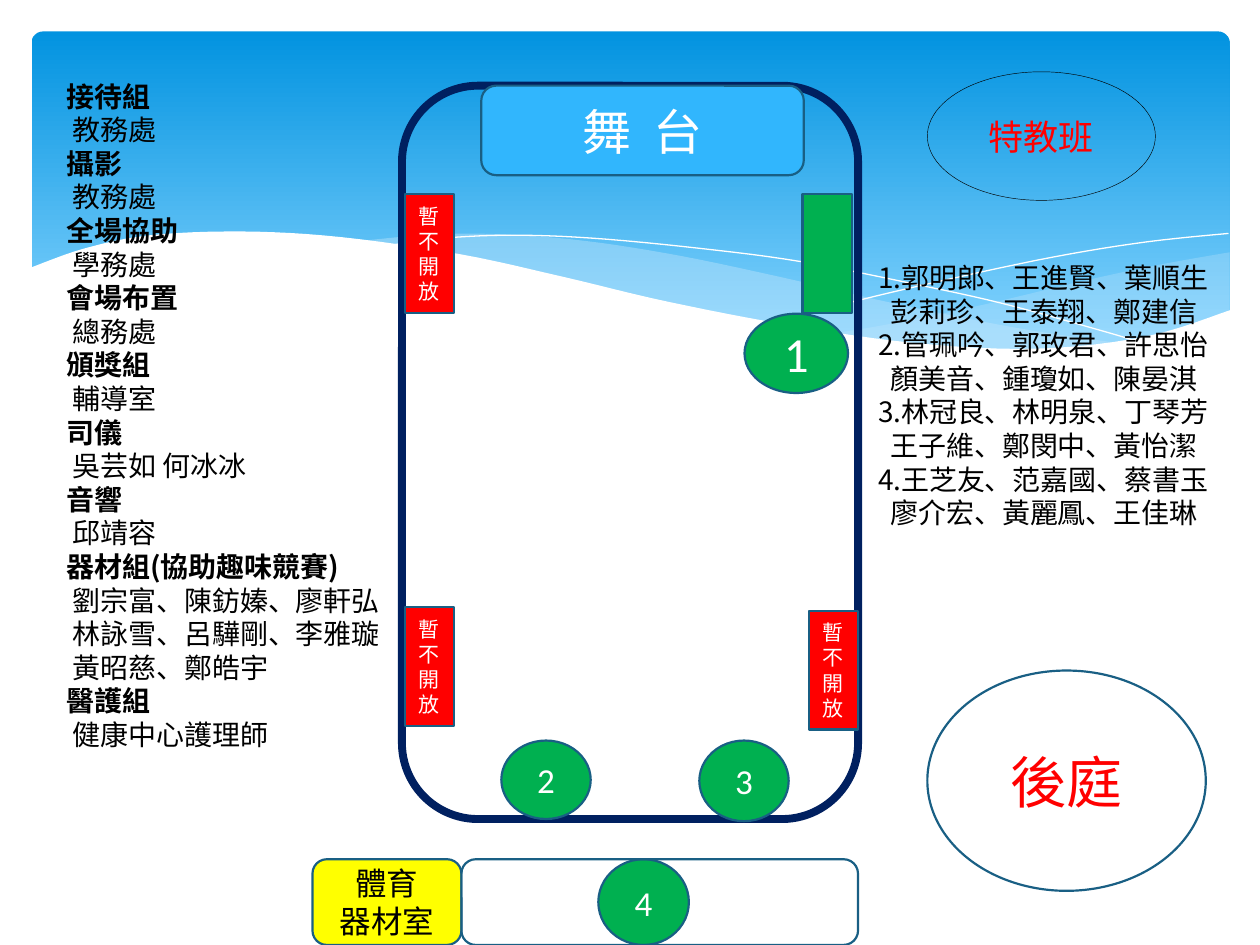
"""Build the staffing map of the assembly hall."""
from dataclasses import dataclass

from lxml import etree
from pptx import Presentation
from pptx.dml.color import RGBColor
from pptx.enum.shapes import MSO_SHAPE
from pptx.enum.text import MSO_ANCHOR, PP_ALIGN
from pptx.oxml.ns import qn
from pptx.util import Inches, Pt

RECT, ROUND, OVAL = MSO_SHAPE.RECTANGLE, MSO_SHAPE.ROUNDED_RECTANGLE, MSO_SHAPE.OVAL
MID, LEFT, CENTER = MSO_ANCHOR.MIDDLE, PP_ALIGN.LEFT, PP_ALIGN.CENTER


@dataclass(frozen=True)
class Theme:
    """Colours, fonts and sizes."""
    white: str = "FFFFFF"
    black: str = "000000"
    red: str = "FF0000"
    green: str = "00B050"
    yellow: str = "FFFF00"
    blue: str = "31B6FD"
    navy: str = "002060"
    edge: str = "195F84"
    mist: str = "C6E7FC"
    sky: tuple = ("0293E0", "83D3FE")
    latin: str = "Calibri"
    cjk: str = "Noto Sans CJK JP"
    note: int = 12
    body: int = 16
    room: int = 18
    mark: int = 20
    big: int = 28
    yard: int = 32
    pitch: float = 19.2
    thin: float = 1.25


T = Theme()

TEAMS = [
    ("接待組", ["教務處"]),
    ("攝影", ["教務處"]),
    ("全場協助", ["學務處"]),
    ("會場布置", ["總務處"]),
    ("頒獎組", ["輔導室"]),
    ("司儀", ["吳芸如 何冰冰"]),
    ("音響", ["邱靖容"]),
    ("器材組(協助趣味競賽)",
     ["劉宗富、陳鈁嫀、廖軒弘", "林詠雪、呂驊剛、李雅璇", "黃昭慈、鄭皓宇"]),
    ("醫護組", ["健康中心護理師"]),
]
POSTS = [
    ("1.郭明郎、王進賢、葉順生", ["彭莉珍、王泰翔、鄭建信"]),
    ("2.管珮吟、郭玫君、許思怡", ["顏美音、鍾瓊如、陳晏淇"]),
    ("3.林冠良、林明泉、丁琴芳", ["王子維、鄭閔中、黃怡潔"]),
    ("4.王芝友、范嘉國、蔡書玉", ["廖介宏、黃麗鳳、王佳琳"]),
]

HILL = [(97.7, 32.8), (91, 35.6), (82.3, 36.9), (72.6, 36.3), (62.6, 34.4),
        (52.9, 31.9), (44.7, 29.3), (36.5, 26.9), (27.1, 25.1), (19.3, 24.5),
        (11.9, 24.9), (6.7, 26.3), (2.3, 28.4)]
BASE = [(2.3, 43.9), (97.7, 43.9)]
EAST = [[(97.6, 26.7), (92.1, 28), (86.1, 29.7), (77.9, 32.3), (70.6, 34.3), (66.1, 35.3)],
        [(66.1, 35.3), (70.5, 36.1), (75.7, 36.8), (81.4, 37.1), (87.2, 36.5),
         (92.1, 35.3), (97.6, 32.9)]]
WEST = [[(28.6, 25.5), (34.4, 24.8), (39.9, 24.8), (46.5, 25.5), (54.1, 27.1),
         (62.9, 29.6), (70.6, 32), (80.7, 34.7), (89.3, 36.4)],
        [(89.3, 36.4), (84.8, 36.8), (78.5, 37), (72.2, 36.5), (65, 35.2),
         (56.6, 33.1), (44.9, 29.6), (36.2, 27.1), (28.6, 25.5)]]
FALL = [(30.9, 26), (34.4, 25.3), (40.1, 24.9), (46.9, 25.2), (55.6, 26.3),
        (63.6, 27.7), (72.7, 30.1), (79.5, 32.1), (86.9, 34.8), (90.7, 36.3)]
RISE = [(61.3, 34.3), (67.2, 32.1), (74.8, 29.7), (83.6, 27.2), (91, 25.6), (97.5, 24.7)]


def part(box, x, y, w, h):
    """Return the box at the given percentages of another box."""
    left, top, wide, high = box
    return left + wide * x / 100, top + high * y / 100, wide * w / 100, high * h / 100


def paint(shape, fill=None, line=None, width=T.thin, alpha=None):
    """Set the fill, line and shadow of a shape."""
    shape.shadow.inherit = False
    if fill:
        shape.fill.solid()
        shape.fill.fore_color.rgb = RGBColor.from_string(fill)
    else:
        shape.fill.background()
    if alpha:
        tone = shape.fill._xPr.find(qn("a:solidFill"))[0]
        etree.SubElement(tone, qn("a:alpha"), val=str(alpha * 1000))
    if line:
        shape.line.color.rgb = RGBColor.from_string(line)
        shape.line.width = Pt(width)
    else:
        shape.line.fill.background()


def write(para, text, size=T.body, color=T.white, font=T.latin, bold=False,
          align=CENTER, indent=0, pitch=None, track=0):
    """Put formatted text into a paragraph."""
    para.alignment = align
    if indent:
        para._p.get_or_add_pPr().set("marL", str(Inches(indent)))
    if pitch:
        para.line_spacing = Pt(pitch)
    run = para.add_run()
    run.text = text
    run.font.name, run.font.size, run.font.bold = font, Pt(size), bold
    run.font.color.rgb = RGBColor.from_string(color)
    props = run.font._element
    props.find(qn("a:latin")).addnext(etree.Element(qn("a:ea"), typeface=font))
    if track:
        props.set("spc", str(track))


def block(slide, kind, box, text="", fill=None, line=T.edge, width=T.thin, **form):
    """Add a preset shape with centred text."""
    shape = slide.shapes.add_shape(kind, *map(Inches, box))
    paint(shape, fill, line, width)
    frame = shape.text_frame
    frame.word_wrap, frame.vertical_anchor = True, MID
    for i, row in enumerate(text.split("\n") if text else []):
        write(frame.add_paragraph() if i else frame.paragraphs[0], row, **form)
    return shape


def curve(pts, steps=6):
    """Return a smooth run of points through the given ones."""
    ends = [pts[0], *pts, pts[-1]]
    out = [pts[0]]
    for a, b, c, d in zip(ends, ends[1:], ends[2:], ends[3:]):
        for t in (k / steps for k in range(1, steps + 1)):
            out.append(tuple(
                (2 * q + (r - p) * t + (2 * p - 5 * q + 4 * r - s) * t ** 2
                 + (3 * q - p - 3 * r + s) * t ** 3) / 2
                for p, q, r, s in zip(a, b, c, d)))
    return out


def wave(slide, box, pts, close=True, **look):
    """Draw a freeform through points in percent of the box."""
    spots = [tuple(map(Inches, part(box, x, y, 0, 0)[:2])) for x, y in pts]
    pen = slide.shapes.build_freeform(*spots[0])
    pen.add_line_segments(spots[1:], close=close)
    paint(pen.convert_to_shape(), **look)


def backdrop(slide, box):
    """Draw the sky panel and its waves."""
    panel = block(slide, ROUND, part(box, 2.5, 3.33, 95.1, 36), line=None)
    panel.adjustments[0] = 0.034
    panel.fill.gradient()
    panel.fill.gradient_angle = 270
    for stop, tone, spot in zip(panel.fill.gradient_stops, T.sky, (0, 0.9)):
        stop.color.rgb, stop.position = RGBColor.from_string(tone), spot
    for (top, low), alpha in ((EAST, 29), (WEST, 40)):
        wave(slide, box, curve(top) + curve(low), fill=T.mist, alpha=alpha)
    for pts in (FALL, RISE):
        wave(slide, box, curve(pts), close=False, line=T.white, width=0)
    wave(slide, box, curve(HILL) + BASE, fill=T.white)


def hall(slide, box):
    """Draw the hall with its stage, doors and posts."""
    block(slide, ROUND, box, line=T.navy, width=4.5)
    for x, y in ((0.6, 14.8), (0.6, 71.1), (89.2, 71.6)):
        block(slide, RECT, part(box, x, y, 10.8, 16.2), "暫不開放", T.red, size=T.note)
    block(slide, RECT, part(box, 87.8, 14.8, 10.8, 16.2), fill=T.green)
    for name, spot, size in (("1", (75.1, 31.1, 22.7, 10.8), T.big),
                             ("3", (65.2, 89.3, 19.6, 11), T.mark),
                             ("2", (21.8, 89.3, 19.6, 10.7), T.mark)):
        block(slide, OVAL, part(box, *spot), name, T.green, size=size)
    block(slide, ROUND, part(box, 17.4, 0, 70.7, 12.2), "舞 台", T.blue, size=T.big, track=320)


def places(slide, box):
    """Draw the class and the back yard beside the hall."""
    form = {"color": T.red, "font": T.cjk}
    block(slide, OVAL, part(box, 0, 0, 81.9, 15.7), "特教班", line=T.black, width=0.25,
          size=T.mark, **form)
    block(slide, OVAL, part(box, 0, 73.1, 100, 26.9), "後庭", size=T.yard, **form)


def store(slide, box):
    """Draw the equipment room and post 4."""
    block(slide, ROUND, part(box, 0, 0, 27.3, 100), "體育\n器材室", T.yellow,
          size=T.room, color=T.black)
    block(slide, OVAL, part(box, 52.4, 0, 16.6, 100), "4", T.green, size=T.mark)
    block(slide, ROUND, part(box, 27.3, 0, 72.7, 100))


def roster(slide, box, groups, indent, bold=False):
    """List groups of names, each with a lead line."""
    frame = slide.shapes.add_textbox(*map(Inches, box)).text_frame
    frame.word_wrap = True
    rows = [(text, i) for lead, names in groups for i, text in enumerate([lead, *names])]
    for n, (text, i) in enumerate(rows):
        write(frame.add_paragraph() if n else frame.paragraphs[0], text, color=T.black,
              font=T.cjk, align=LEFT, pitch=T.pitch, bold=bold and not i,
              indent=indent if i else 0)


def main():
    """Build and save the slide."""
    deck = Presentation()
    deck.slide_width, deck.slide_height = Inches(10), Inches(7.5)
    slide = deck.slides.add_slide(deck.slide_layouts[6])
    page = (0, 0, 10, 7.5)
    backdrop(slide, page)
    hall(slide, part(page, 31.9, 9.07, 36.2, 77.6))
    places(slide, part(page, 73.6, 7.6, 22.1, 86.67))
    roster(slide, part(page, 68.7, 26.93, 30.1, 37.2), POSTS, 0.1)
    roster(slide, part(page, 4.3, 7.73, 27.6, 73.2), TEAMS, 0.05, bold=True)
    store(slide, part(page, 24.8, 90.93, 43.3, 9.07))
    deck.save("out.pptx")


if __name__ == "__main__":
    main()
